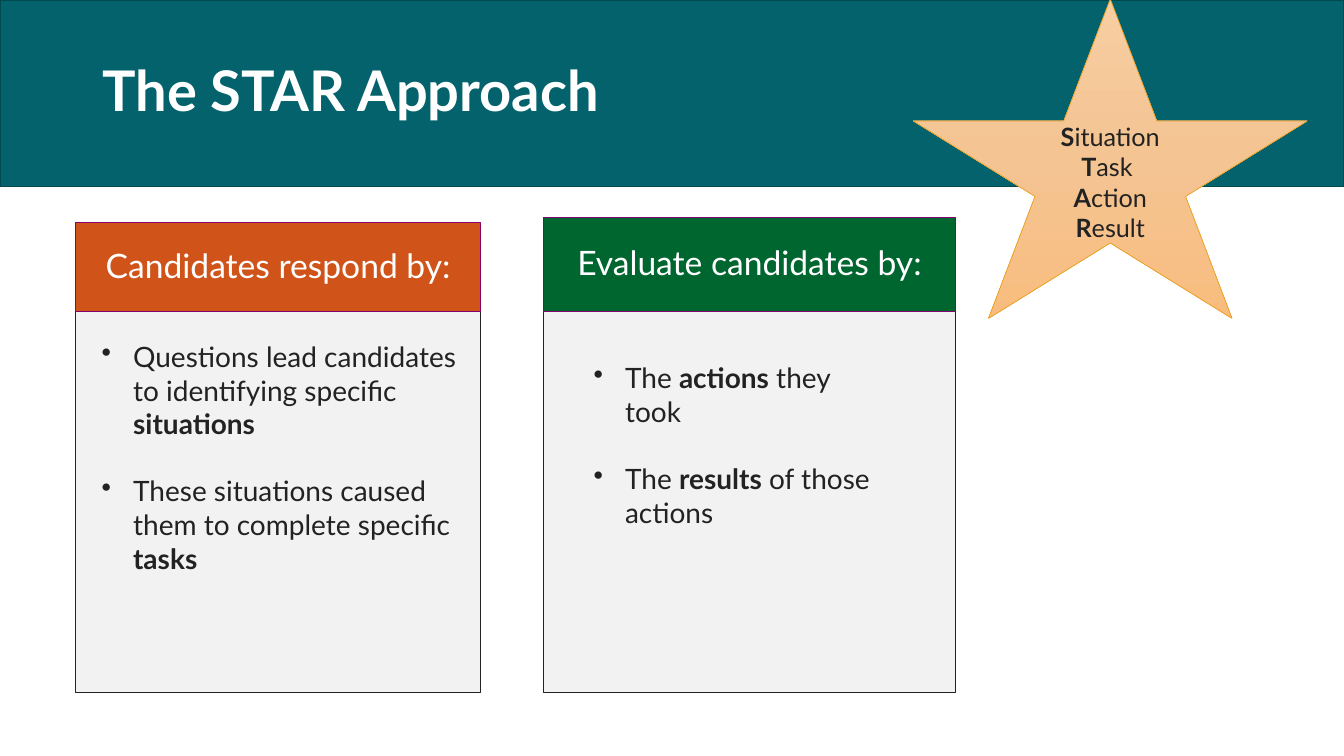
from copy import deepcopy
from dataclasses import dataclass

from pptx import Presentation
from pptx.dml.color import RGBColor
from pptx.enum.shapes import MSO_SHAPE
from pptx.enum.text import MSO_ANCHOR, PP_ALIGN
from pptx.oxml.ns import qn
from pptx.shapes.autoshape import Shape
from pptx.slide import Slide
from pptx.text.text import _Paragraph as Paragraph
from pptx.util import Pt

FONT = "Lato"
COLORS = {
    "teal": "03626B",
    "teal_edge": "02494F",
    "orange": "D05319",
    "green": "00662F",
    "purple": "84036C",
    "panel": "F2F2F2",
    "ink": "222222",
    "white": "FFFFFF",
    "star_edge": "ECA120",
    "star_top": "F7CDA1",
    "star_middle": "F4C493",
    "star_bottom": "F8BD7E",
}
PAGE_WIDTH, PAGE_HEIGHT = 960, 540
BAR_HEIGHT = 133.2
PANEL_BOTTOM = 494.6
BULLET_INDENT = 22.5
BULLET_GAP = 24


@dataclass(frozen=True)
class Span:
    text: str
    bold: bool = False


@dataclass(frozen=True)
class Box:
    left: float
    top: float
    width: float
    height: float

    def lengths(self) -> tuple[Pt, Pt, Pt, Pt]:
        return Pt(self.left), Pt(self.top), Pt(self.width), Pt(self.height)


@dataclass(frozen=True)
class Card:
    heading: str
    color: str
    header: Box
    panel_top: float
    body: Box
    bullets: list[list[Span]]


CARDS = [
    Card(
        "Candidates respond by:", "orange",
        Box(54, 159.1, 289.4, 63.4), 219.6, Box(65.5, 239, 269.3, 177),
        [
            [Span("Questions lead candidates to identifying specific "), Span("situations", True)],
            [Span("These situations caused them to complete specific "), Span("tasks", True)],
        ],
    ),
    Card(
        "Evaluate candidates by:", "green",
        Box(388.1, 155.5, 294.5, 67), 222.5, Box(416.9, 254.2, 218.9, 128),
        [
            [Span("The "), Span("actions", True), Span(" they took")],
            [Span("The "), Span("results", True), Span(" of those actions")],
        ],
    ),
]
STAR = Box(652.3, -0.7, 281.5, 228.2)
STAR_WORDS = ["Situation", "Task ", "Action", "Result"]
STAR_STOPS = [(0, "star_top"), (0.5, "star_middle"), (1, "star_bottom")]


def rgb(name: str) -> RGBColor:
    return RGBColor.from_string(COLORS[name])


def add_shape(page: Slide, kind: MSO_SHAPE, box: Box, fill: str, line: str, weight: float) -> Shape:
    shape = page.shapes.add_shape(kind, *box.lengths())
    shape.shadow.inherit = False
    shape.fill.solid()
    shape.fill.fore_color.rgb = rgb(fill)
    shape.line.color.rgb = rgb(line)
    shape.line.width = Pt(weight)
    return shape


def write(para: Paragraph, spans: list[Span], size: float, color: str, align: PP_ALIGN) -> None:
    para.alignment = align
    para.font.name = FONT
    para.font.size = Pt(size)
    para.font.color.rgb = rgb(color)
    for span in spans:
        run = para.add_run()
        run.text = span.text
        run.font.bold = span.bold


def add_bullet(para: Paragraph) -> None:
    properties = para._p.get_or_add_pPr()
    properties.set("marL", str(Pt(BULLET_INDENT)))
    properties.set("indent", str(-Pt(BULLET_INDENT)))
    bullet = properties.makeelement(qn("a:buChar"), {"char": "•"})
    properties.find(qn("a:defRPr")).addprevious(bullet)


def add_title(page: Slide) -> None:
    bar = add_shape(page, MSO_SHAPE.RECTANGLE, Box(0, 0, PAGE_WIDTH, BAR_HEIGHT),
                    "teal", "teal_edge", 1)
    title = page.shapes.title
    title._element.addprevious(bar._element)
    title.left, title.top, title.width, title.height = Box(66, 14.4, 828, 104.4).lengths()
    title.fill.solid()
    title.fill.fore_color.rgb = rgb("teal")
    title.text_frame.vertical_anchor = MSO_ANCHOR.MIDDLE
    para = title.text_frame.paragraphs[0]
    para.line_spacing = 0.9
    write(para, [Span("The STAR Approach", True)], 40, "white", PP_ALIGN.LEFT)


def add_card(page: Slide, card: Card) -> None:
    head = card.header
    panel = Box(head.left, card.panel_top, head.width, PANEL_BOTTOM - card.panel_top)
    add_shape(page, MSO_SHAPE.RECTANGLE, panel, "panel", "ink", 0.75)

    header = add_shape(page, MSO_SHAPE.RECTANGLE, head, card.color, "purple", 0.5)
    header.text_frame.vertical_anchor = MSO_ANCHOR.MIDDLE
    heading = header.text_frame.paragraphs[0]
    heading.line_spacing = 0.9
    write(heading, [Span(card.heading)], 24, "white", PP_ALIGN.CENTER)

    frame = page.shapes.add_textbox(*card.body.lengths()).text_frame
    frame.word_wrap = True
    for index, spans in enumerate(card.bullets):
        para = frame.add_paragraph() if index else frame.paragraphs[0]
        para.space_before = Pt(BULLET_GAP if index else 0)
        write(para, spans, 20, "ink", PP_ALIGN.LEFT)
        add_bullet(para)


def add_star(page: Slide) -> None:
    star = add_shape(page, MSO_SHAPE.STAR_5_POINT, STAR, "star_top", "star_edge", 0.5)
    star.fill.gradient()
    star.fill.gradient_angle = 270
    stop_list = star._element.spPr.find(f".//{qn('a:gsLst')}")
    stop_list.append(deepcopy(stop_list[0]))
    for stop, (position, color) in zip(star.fill.gradient_stops, STAR_STOPS):
        stop.position = position
        stop.color.rgb = rgb(color)

    frame = star.text_frame
    frame.vertical_anchor = MSO_ANCHOR.MIDDLE
    for index, word in enumerate(STAR_WORDS):
        para = frame.add_paragraph() if index else frame.paragraphs[0]
        write(para, [Span(word[0], True), Span(word[1:])], 18, "ink", PP_ALIGN.CENTER)


def main() -> None:
    deck = Presentation()
    deck.slide_width, deck.slide_height = Pt(PAGE_WIDTH), Pt(PAGE_HEIGHT)
    page = deck.slides.add_slide(deck.slide_layouts.get_by_name("Title Only"))
    add_title(page)
    for card in CARDS:
        add_card(page, card)
    add_star(page)
    deck.save("out.pptx")


if __name__ == "__main__":
    main()
